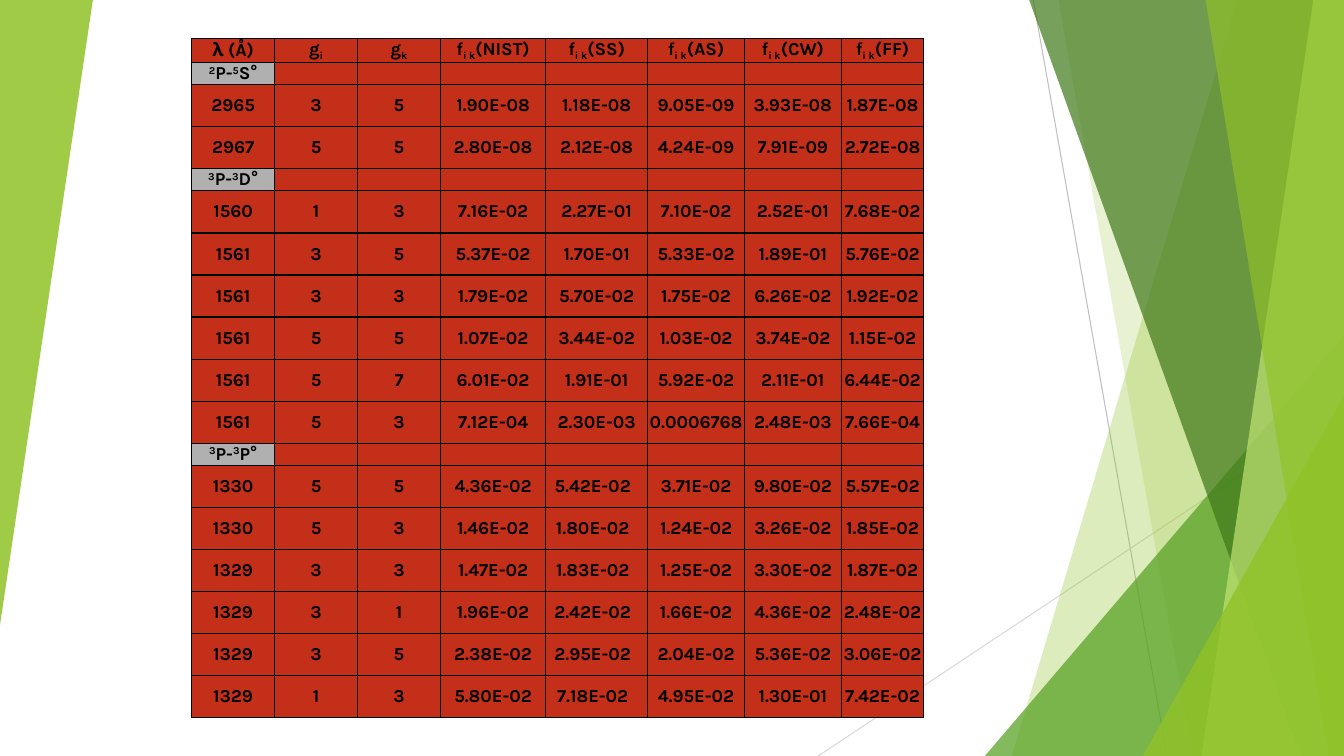
from lxml.etree import SubElement
from pptx import Presentation
from pptx.dml.color import RGBColor
from pptx.enum.shapes import MSO_CONNECTOR as Connector, MSO_SHAPE as Shape
from pptx.enum.text import MSO_ANCHOR as Anchor, PP_ALIGN as Align
from pptx.oxml import parse_xml
from pptx.oxml.ns import nsdecls, qn
from pptx.util import Cm, Pt

GREEN, RED, GREY, BLACK = "90C226", "C42F1A", "B0B0B0", "000000"
WIDTH, HEIGHT = 33.87, 19.05

prs = Presentation()
prs.slide_width, prs.slide_height = Cm(WIDTH), Cm(HEIGHT)
slide = prs.slides.add_slide(prs.slide_layouts[6])
shapes = slide.shapes


def paint(target, color, opacity=100):
    """Solid fill for a shape or a table cell."""
    target.fill.solid()
    target.fill.fore_color.rgb = RGBColor.from_string(color)
    if opacity < 100:
        tint = target.fill._xPr.find(qn("a:solidFill"))[0]
        SubElement(tint, qn("a:alpha"), val=str(opacity * 1000))


def write(cell, text, size=13, font="Karla", color=BLACK, shift=0):
    """Centred bold text; every second piece between bars is raised or lowered."""
    paragraph = cell.text_frame.paragraphs[0]
    paragraph.alignment = Align.CENTER
    for i, piece in enumerate(text.split("|")):
        if not piece:
            continue
        run = paragraph.add_run()
        run.text = piece
        run.font.size, run.font.name, run.font.bold = Pt(size), font, True
        run.font.color.rgb = RGBColor.from_string(color)
        if i % 2:
            run.font._element.set("baseline", str(shift * 1000))
    if not text:  # keeps empty rows low
        SubElement(paragraph._p, qn("a:endParaRPr"), sz=str(size * 100))


# Thin background lines
for x1, y1, x2, y2, color in [(26.04, 0, 29.41, HEIGHT, "BFBFBF"),
                              (WIDTH, 10.24, 20.62, HEIGHT, "D9D9D9")]:
    ray = shapes.add_connector(Connector.STRAIGHT, Cm(x1), Cm(y1), Cm(x2), Cm(y2))
    ray.line.color.rgb = RGBColor.from_string(color)
    ray.line.width = Pt(0.75)
    SubElement(ray._element.spPr, qn("a:effectLst"))

# Green facets: bands reach the right edge, given by top and bottom left x
facets = [
    ("band", (31.19, 25.5), GREEN, 30),
    ("band", (26.67, 30.05), GREEN, 20),
    ("triangle", (24.82, 8.46, 9.05, 10.59), "54A021", 72),
    ("band", (25.93, 32.79), "3F7819", 70),
    ("band", (33.1, 30.28), "C0E474", 70),
    ("band", (30.38, 33.48), GREEN, 65),
    ("triangle", (28.8, 9.98, 5.07, 9.07), GREEN, 80),
    ("left triangle", (0, 0, 2.34, 15.75), GREEN, 85),
]
for kind, place, color, opacity in facets:
    if kind == "band":
        top_x, bottom_x = place
        outline = shapes.build_freeform(Cm(top_x), Cm(-0.02))
        outline.add_line_segments([(Cm(WIDTH), Cm(-0.02)), (Cm(WIDTH), Cm(HEIGHT)),
                                   (Cm(bottom_x), Cm(HEIGHT))], close=True)
        facet = outline.convert_to_shape()
    else:
        facet = shapes.add_shape(Shape.ISOSCELES_TRIANGLE, *map(Cm, place))
        facet.adjustments[0] = 1
        if kind == "left triangle":
            facet.rotation = 180
    paint(facet, color, opacity)
    facet.line.fill.background()
    facet.shadow.inherit = False

# Oscillator strengths by transition
strengths = [
    ["λ (Å)", "g|i", "g|k"] + [f"f|i k|({origin})" for origin in ("NIST", "SS", "AS", "CW", "FF")],
    ["|2|P-|5|S°"],
    ["2965", "3", "5", "1.90E-08", "1.18E-08", "9.05E-09", "3.93E-08", "1.87E-08"],
    ["2967", "5", "5", "2.80E-08", "2.12E-08", "4.24E-09", "7.91E-09", "2.72E-08"],
    ["|3|P-|3|D°"],
    ["1560", "1", "3", "7.16E-02", "2.27E-01", "7.10E-02", "2.52E-01", "7.68E-02"],
    ["1561", "3", "5", "5.37E-02", "1.70E-01", "5.33E-02", "1.89E-01", "5.76E-02"],
    ["1561", "3", "3", "1.79E-02", "5.70E-02", "1.75E-02", "6.26E-02", "1.92E-02"],
    ["1561", "5", "5", "1.07E-02", "3.44E-02", "1.03E-02", "3.74E-02", "1.15E-02"],
    ["1561", "5", "7", "6.01E-02", "1.91E-01", "5.92E-02", "2.11E-01", "6.44E-02"],
    ["1561", "5", "3", "7.12E-04", "2.30E-03", "0.0006768", "2.48E-03", "7.66E-04"],
    ["|3|P-|3|P°"],
    ["1330", "5", "5", "4.36E-02", "5.42E-02", "3.71E-02", "9.80E-02", "5.57E-02"],
    ["1330", "5", "3", "1.46E-02", "1.80E-02", "1.24E-02", "3.26E-02", "1.85E-02"],
    ["1329", "3", "3", "1.47E-02", "1.83E-02", "1.25E-02", "3.30E-02", "1.87E-02"],
    ["1329", "3", "1", "1.96E-02", "2.42E-02", "1.66E-02", "4.36E-02", "2.48E-02"],
    ["1329", "3", "5", "2.38E-02", "2.95E-02", "2.04E-02", "5.36E-02", "3.06E-02"],
    ["1329", "1", "3", "5.80E-02", "7.18E-02", "4.95E-02", "1.30E-01", "7.42E-02"],
]
column_widths = [2.09, 2.09, 2.09, 2.65, 2.57, 2.44, 2.44, 2.08]
LOW_ROW, DATA_ROW = 0.53, 1.06
LAST_TERM = 11  # row of the last transition heading
SS_COLUMN = 4

table = shapes.add_table(len(strengths), len(column_widths), Cm(4.83), Cm(0.97),
                         Cm(sum(column_widths)), Cm(17.07)).table
table.first_row = table.horz_banding = False
for column, width in zip(table.columns, column_widths):
    column.width = Cm(width)

for r, values in enumerate(strengths):
    is_term = len(values) == 1
    table.rows[r].height = Cm(LOW_ROW if is_term or r == 0 else DATA_ROW)
    for c in range(len(column_widths)):
        cell = table.cell(r, c)
        cell.margin_left = cell.margin_right = cell.margin_top = cell.margin_bottom = 0
        if c == SS_COLUMN and r > LAST_TERM:
            cell.margin_right = Cm(0.2)
        cell.vertical_anchor = Anchor.MIDDLE
        write(cell, values[c] if c < len(values) else "", shift=30 if is_term else -25)
        paint(cell, GREY if is_term and c == 0 else RED)
        for i, side in enumerate("LRTB"):
            cell._tc.tcPr.insert(i, parse_xml(
                f'<a:ln{side} {nsdecls("a")} w="12700"><a:solidFill>'
                f'<a:srgbClr val="{BLACK}"/></a:solidFill></a:ln{side}>'))

prs.save("out.pptx")
